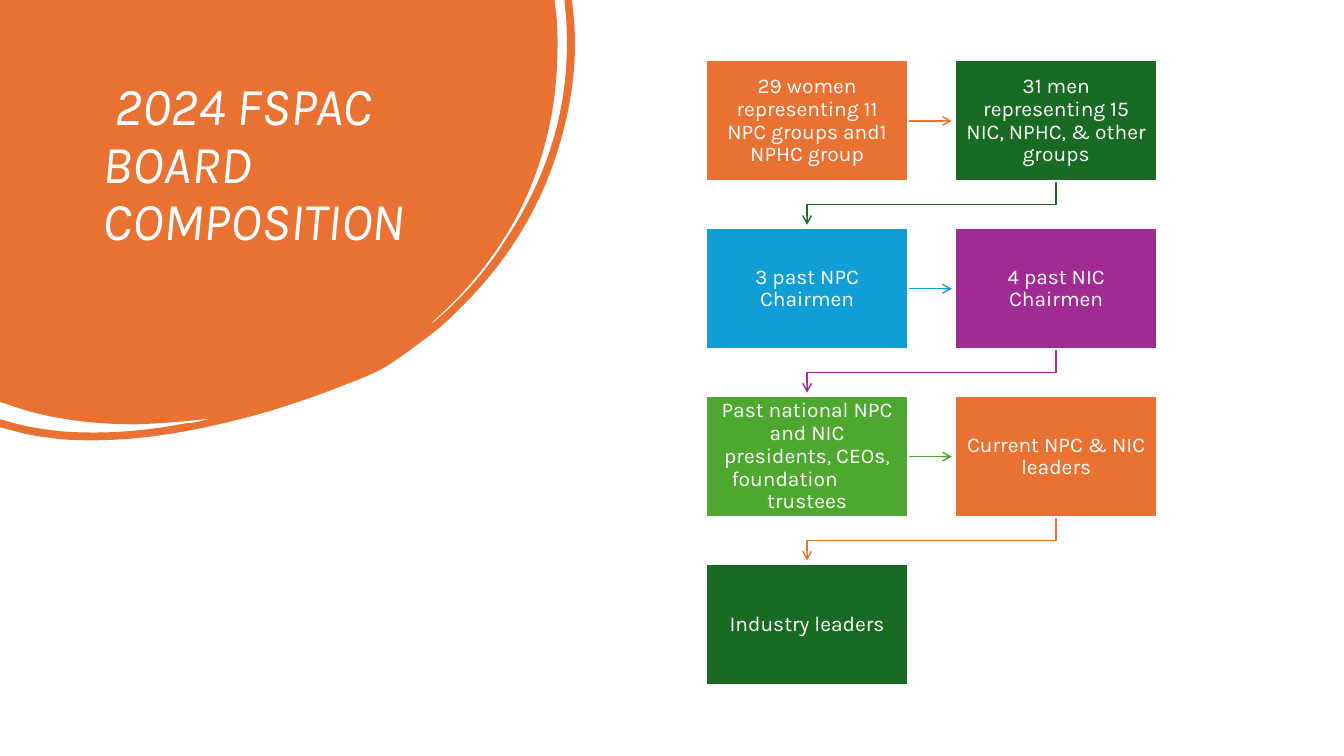
from dataclasses import dataclass

from pptx import Presentation
from pptx.dml.color import RGBColor
from pptx.enum.shapes import MSO_SHAPE
from pptx.enum.text import MSO_ANCHOR, MSO_AUTO_SIZE, PP_ALIGN
from pptx.oxml.ns import qn
from pptx.oxml.xmlchemy import OxmlElement
from pptx.util import Inches, Pt

RECT = MSO_SHAPE.RECTANGLE
TOP, MIDDLE = MSO_ANCHOR.TOP, MSO_ANCHOR.MIDDLE
LEFT, CENTER = PP_ALIGN.LEFT, PP_ALIGN.CENTER
NO_AUTOFIT = MSO_AUTO_SIZE.NONE

FONT = "Karla"
COLORS = {
    "white": "FFFFFF",
    "orange": "E97132",
    "dark_green": "196B24",
    "blue": "0F9ED5",
    "purple": "A02B93",
    "green": "4EA72E",
}
BOX_W, BOX_H = 2.01, 1.2
GRID_X, GRID_Y = 7.0, 0.6
STEP_X, STEP_Y = 2.47, 3.33 / 2
COLUMNS = 2
ARROW_LEN, ARROW_H = 0.43, 0.1
BEND = 0.23


@dataclass
class Group:
    text: str
    color: str


GROUPS = [
    Group("29 women representing 11 NPC groups and1 NPHC group", "orange"),
    Group("31 men representing 15 NIC, NPHC, & other groups", "dark_green"),
    Group("3 past NPC Chairmen", "blue"),
    Group("4 past NIC Chairmen", "purple"),
    Group("Past national NPC and NIC presidents, CEOs, foundation\ttrustees", "green"),
    Group("Current NPC & NIC leaders", "orange"),
    Group("Industry leaders", "dark_green"),
]

BLOB_W, BLOB_H = 5.71, 4.37
BLOB = [
    (0, 0), (5.5, 0), (5.52, 0.17),
    (5.53, 0.26, 5.53, 0.36, 5.53, 0.45),
    (5.53, 1.01, 5.42, 1.54, 5.18, 2.04),
    (4.96, 2.49, 4.65, 2.88, 4.27, 3.21),
    (4.29, 3.21, 4.3, 3.19, 4.32, 3.18),
    (4.59, 2.95, 4.82, 2.69, 5.01, 2.39),
    (5.43, 1.76, 5.65, 1.07, 5.62, 0.3),
    (5.62, 0.21, 5.61, 0.12, 5.6, 0.03),
    (5.6, 0), (5.67, 0), (5.68, 0.07),
    (5.74, 0.54, 5.68, 1.02, 5.53, 1.5),
    (5.33, 2.14, 4.97, 2.68, 4.48, 3.14),
    (4.39, 3.23, 4.29, 3.31, 4.19, 3.38),
    (4.09, 3.46, 3.99, 3.53, 3.87, 3.61),
    (3.75, 3.69, 3.6, 3.75, 3.44, 3.81),
    (2.99, 3.99, 2.52, 4.14, 2.03, 4.24),
    (1.57, 4.34, 1.1, 4.39, 0.63, 4.36),
    (0.45, 4.34, 0.28, 4.32, 0.12, 4.27),
    (0, 4.24), (0, 4.16), (0.04, 4.17),
    (0.23, 4.23, 0.42, 4.26, 0.61, 4.28),
    (1.03, 4.31, 1.43, 4.28, 1.84, 4.2),
    (1.89, 4.2, 1.93, 4.19, 1.98, 4.18),
    (2.02, 4.17, 2.06, 4.16, 2.1, 4.15),
    (1.86, 4.18, 1.61, 4.2, 1.36, 4.21),
    (0.92, 4.21, 0.48, 4.16, 0.07, 4.01),
    (0, 3.99),
]


def rgb(name: str) -> RGBColor:
    return RGBColor.from_string(COLORS[name])


def path_step(tag: str, coords: tuple):
    step = OxmlElement(tag)
    for x, y in zip(coords[0::2], coords[1::2]):
        pt = OxmlElement("a:pt")
        pt.set("x", str(Inches(x)))
        pt.set("y", str(Inches(y)))
        step.append(pt)
    return step


def add_outline(slide, x: float, y: float, w: float, h: float, segments: list, close: bool = False):
    builder = slide.shapes.build_freeform(0, 0, scale=1.0)
    builder.add_line_segments([(Inches(w), Inches(h))], close=False)
    sp = builder.convert_to_shape(Inches(x), Inches(y))
    sp.shadow.inherit = False
    outline = next(sp._element.iter(qn("a:path")))
    for child in list(outline):
        outline.remove(child)
    outline.append(path_step("a:moveTo", segments[0]))
    for seg in segments[1:]:
        outline.append(path_step("a:lnTo" if len(seg) == 2 else "a:cubicBezTo", seg))
    if close:
        outline.append(OxmlElement("a:close"))
    return sp


def add_blob(slide) -> None:
    sp = add_outline(slide, 0, 0, BLOB_W, BLOB_H, BLOB, close=True)
    sp.fill.solid()
    sp.fill.fore_color.rgb = rgb("orange")
    sp.line.fill.background()


def write(sp, text: str, size: int, align, anchor, inset_y: float, italic: bool = False) -> None:
    tf = sp.text_frame
    tf.text = text
    tf.word_wrap = True
    tf.auto_size = NO_AUTOFIT
    tf.vertical_anchor = anchor
    tf.margin_left = tf.margin_right = Inches(0.1)
    tf.margin_top = tf.margin_bottom = Inches(inset_y)
    p = tf.paragraphs[0]
    p.alignment = align
    p.line_spacing = 0.9
    for r in p.runs:
        r.font.name = FONT
        r.font.size = Pt(size)
        r.font.italic = italic
        r.font.color.rgb = rgb("white")


def add_title(slide) -> None:
    sp = slide.shapes.title
    sp.left, sp.top = Inches(0.92), Inches(0.74)
    sp.width, sp.height = Inches(3.52), Inches(2.22)
    write(sp, " 2024 FSPAC BOARD COMPOSITION", 38, LEFT, TOP, 0.05, italic=True)
    slide.shapes._spTree.append(sp._element)


def add_arrow(slide, x: float, y: float, w: float, h: float, points: list, color: str) -> None:
    sp = add_outline(slide, x, y, w, h, points)
    sp.fill.background()
    sp.line.color.rgb = rgb(color)
    sp.line.width = Pt(1)
    tail = OxmlElement("a:tailEnd")
    tail.set("type", "arrow")
    sp._element.spPr.find(qn("a:ln")).append(tail)


def add_row_arrow(slide, x: float, y: float, color: str) -> None:
    mid = ARROW_H / 2
    top = y + BOX_H / 2 - mid
    add_arrow(slide, x + BOX_W, top, ARROW_LEN, ARROW_H, [(0, mid), (ARROW_LEN, mid)], color)


def add_return_arrow(slide, x: float, y: float, color: str) -> None:
    left = x - STEP_X + BOX_W / 2
    points = [(STEP_X, 0), (STEP_X, BEND), (0, BEND), (0, ARROW_LEN)]
    add_arrow(slide, left, y + BOX_H, STEP_X, ARROW_LEN, points, color)


def add_box(slide, group: Group, x: float, y: float) -> None:
    sp = slide.shapes.add_shape(RECT, Inches(x), Inches(y), Inches(BOX_W), Inches(BOX_H))
    sp.shadow.inherit = False
    sp.fill.solid()
    sp.fill.fore_color.rgb = rgb(group.color)
    sp.line.color.rgb = rgb("white")
    sp.line.width = Pt(1.5)
    write(sp, group.text, 15, CENTER, MIDDLE, 0.1)


def main() -> None:
    prs = Presentation()
    prs.slide_width, prs.slide_height = Inches(13.33), Inches(7.5)
    s = prs.slides.add_slide(prs.slide_layouts[5])
    add_blob(s)
    add_title(s)
    for i, group in enumerate(GROUPS):
        row, col = divmod(i, COLUMNS)
        x, y = GRID_X + col * STEP_X, GRID_Y + row * STEP_Y
        if i < len(GROUPS) - 1:
            add_link = add_return_arrow if col == COLUMNS - 1 else add_row_arrow
            add_link(s, x, y, group.color)
        add_box(s, group, x, y)
    prs.save("out.pptx")


if __name__ == "__main__":
    main()
